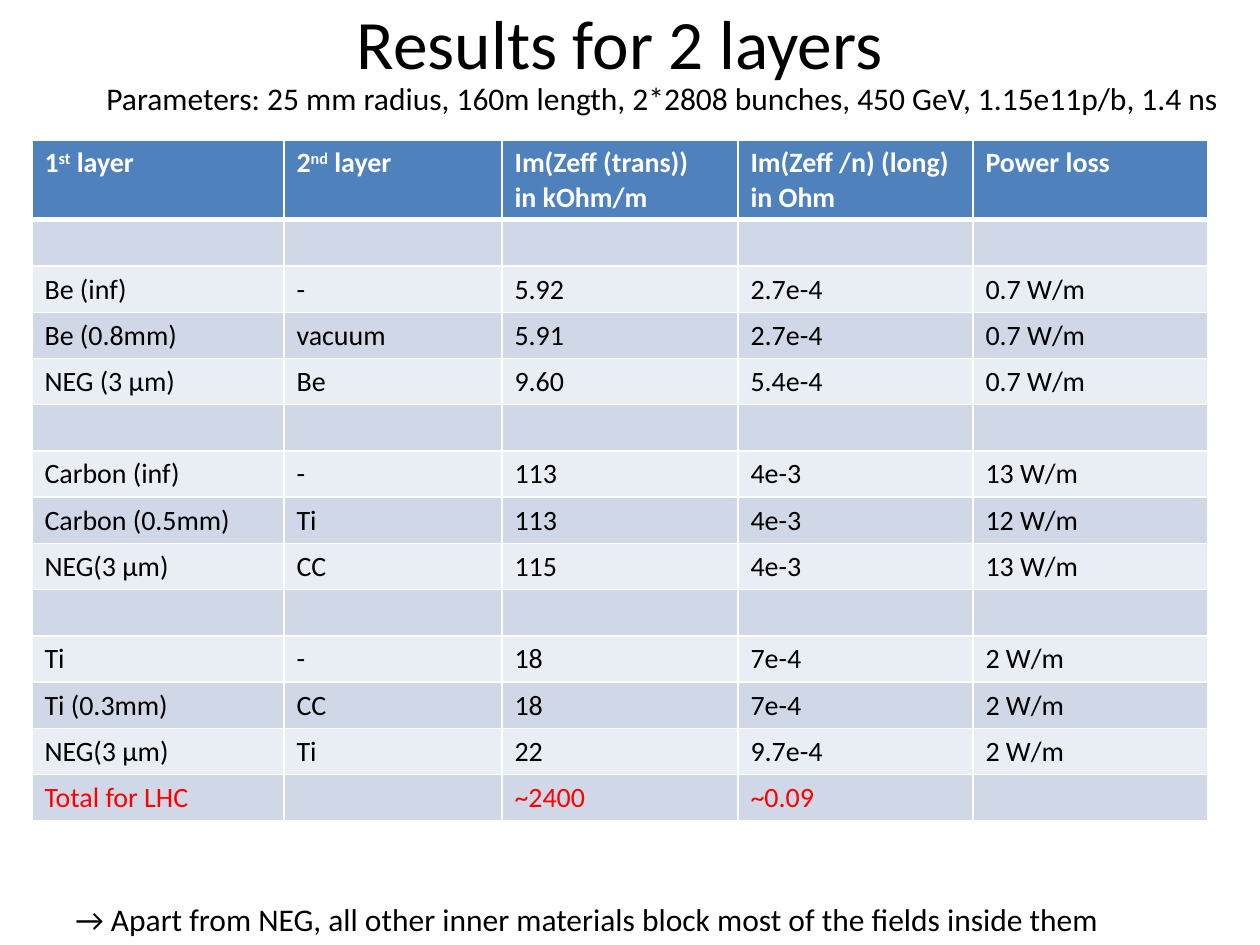
import dataclasses

import lxml.etree
import pptx
import pptx.dml.color
import pptx.enum.text
import pptx.oxml.ns
import pptx.util

EMU_PER_PX = 914400 / 126


@dataclasses.dataclass(frozen=True)
class Theme:
    font: str = "Calibri"
    title_size: float = 39.6
    body_size: float = 18
    table_size: float = 16
    text: str = "000000"
    white: str = "FFFFFF"
    highlight: str = "FF0000"
    header_fill: str = "4F81BD"
    dark_band: str = "D0D8E8"
    light_band: str = "E9EDF4"


THEME = Theme()

COLUMN_WIDTHS = [252, 218, 236, 235, 235]
HEADER_HEIGHT = 74
ROW_HEIGHT = 43

# Header cells are lists of (text, is superscript); "\n" starts a new line
HEADER = [
    [("1", False), ("st", True), (" layer", False)],
    [("2", False), ("nd", True), (" layer", False)],
    [("Im(Zeff (trans))", False), ("\n", False), ("in kOhm/m", False)],
    [("Im(Zeff /n) (long) in Ohm", False)],
    [("Power loss", False)],
]
GAP_ROW = [""] * 5
RESULTS = [
    GAP_ROW,
    ["Be (inf)", "-", "5.92", "2.7e-4", "0.7 W/m"],
    ["Be (0.8mm)", "vacuum", "5.91", "2.7e-4", "0.7 W/m"],
    ["NEG (3 μm)", "Be", "9.60", "5.4e-4", "0.7 W/m"],
    GAP_ROW,
    ["Carbon (inf)", "-", "113", "4e-3", "13 W/m"],
    ["Carbon (0.5mm)", "Ti", "113", "4e-3", "12 W/m"],
    ["NEG(3 μm)", "CC", "115", "4e-3", "13 W/m"],
    GAP_ROW,
    ["Ti", "-", "18", "7e-4", "2 W/m"],
    ["Ti (0.3mm)", "CC", "18", "7e-4", "2 W/m"],
    ["NEG(3 μm)", "Ti", "22", "9.7e-4", "2 W/m"],
    ["Total for LHC", "", "~2400", "~0.09", ""],
]


def px(length):
    return pptx.util.Emu(round(length * EMU_PER_PX))


def rgb(color):
    return pptx.dml.color.RGBColor.from_string(color)


def add_run(paragraph, text, size, color, bold=False):
    run = paragraph.add_run()
    run.text = text
    run.font.name = THEME.font
    run.font.size = pptx.util.Pt(size)
    run.font.bold = bold
    run.font.color.rgb = rgb(color)
    return run


def add_title(slide, box, text):
    shape = slide.shapes.add_textbox(*map(px, box))
    frame = shape.text_frame
    frame.word_wrap = True
    frame.vertical_anchor = pptx.enum.text.MSO_ANCHOR.MIDDLE
    paragraph = frame.paragraphs[0]
    paragraph.alignment = pptx.enum.text.PP_ALIGN.CENTER
    add_run(paragraph, text, THEME.title_size, THEME.text)


def add_note_line(slide, box, text):
    shape = slide.shapes.add_textbox(*map(px, box))
    frame = shape.text_frame
    frame.word_wrap = False
    frame.auto_size = pptx.enum.text.MSO_AUTO_SIZE.SHAPE_TO_FIT_TEXT
    add_run(frame.paragraphs[0], text, THEME.body_size, THEME.text)


def add_element(parent, tag, **attributes):
    return lxml.etree.SubElement(parent, pptx.oxml.ns.qn(tag), **attributes)


def style_cell(cell, fill, top=1, bottom=1):
    # Borders come before the fill in the cell properties
    properties = cell._tc.get_or_add_tcPr()
    for side, width in (("L", 1), ("R", 1), ("T", top), ("B", bottom)):
        line = add_element(properties, f"a:ln{side}", w=str(pptx.util.Pt(width)))
        add_element(add_element(line, "a:solidFill"), "a:srgbClr", val=THEME.white)
    cell.fill.solid()
    cell.fill.fore_color.rgb = rgb(fill)


def fill_header_cell(cell, parts):
    paragraph = cell.text_frame.paragraphs[0]
    for text, is_superscript in parts:
        if text == "\n":
            paragraph.add_line_break()
            continue
        run = add_run(paragraph, text, THEME.table_size, THEME.white, bold=True)
        if is_superscript:
            run.font._element.set("baseline", "30000")
    style_cell(cell, THEME.header_fill, bottom=3)


def fill_result_cell(cell, text, color, fill, top):
    paragraph = cell.text_frame.paragraphs[0]
    if text:
        add_run(paragraph, text, THEME.table_size, color)
    else:
        # An empty cell keeps the type size, and so the row height
        add_element(paragraph._p, "a:endParaRPr", sz=str(THEME.table_size * 100))
    style_cell(cell, fill, top=top)


def add_results_table(slide, box):
    table = slide.shapes.add_table(
        len(RESULTS) + 1, len(COLUMN_WIDTHS), *map(px, box)
    ).table
    for column, width in zip(table.columns, COLUMN_WIDTHS):
        column.width = px(width)
    for index, row in enumerate(table.rows):
        row.height = px(ROW_HEIGHT if index else HEADER_HEIGHT)

    # Header row
    for column_index, parts in enumerate(HEADER):
        fill_header_cell(table.cell(0, column_index), parts)

    # Banded result rows, the total in the highlight colour
    for row_index, values in enumerate(RESULTS, start=1):
        fill = THEME.dark_band if row_index % 2 else THEME.light_band
        color = THEME.highlight if row_index == len(RESULTS) else THEME.text
        top = 3 if row_index == 1 else 1
        for column_index, text in enumerate(values):
            cell = table.cell(row_index, column_index)
            fill_result_cell(cell, text, color, fill, top)


def main():
    presentation = pptx.Presentation()
    presentation.slide_width = px(1260)
    presentation.slide_height = px(945)
    slide = presentation.slides.add_slide(presentation.slide_layouts[6])

    add_title(slide, (53, 0, 1134, 84), "Results for 2 layers")
    add_results_table(slide, (32, 140, sum(COLUMN_WIDTHS), 680))
    add_note_line(
        slide,
        (94, 73, 1150, 50),
        "Parameters: 25 mm radius, 160m length, 2*2808 bunches, "
        "450 GeV, 1.15e11p/b, 1.4 ns",
    )
    add_note_line(
        slide,
        (63, 894, 1060, 50),
        "→ Apart from NEG, all other inner materials block most of "
        "the fields inside them",
    )
    presentation.save("out.pptx")


if __name__ == "__main__":
    main()
